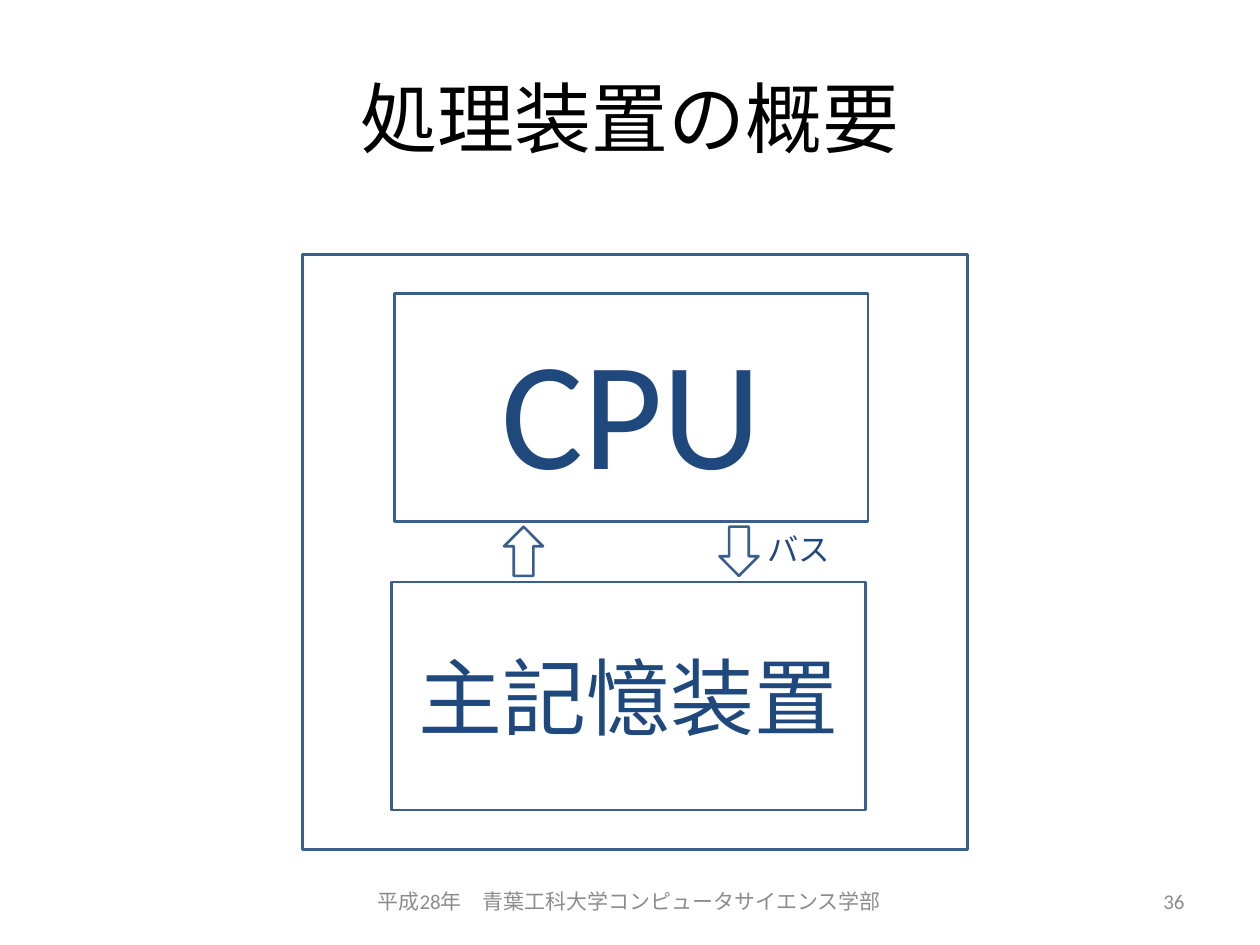
from dataclasses import dataclass

from pptx import Presentation
from pptx.dml.color import RGBColor
from pptx.enum.shapes import MSO_SHAPE
from pptx.enum.text import MSO_ANCHOR, MSO_AUTO_SIZE, PP_ALIGN
from pptx.slide import Slide
from pptx.util import Inches, Pt

BLACK = RGBColor(0x00, 0x00, 0x00)
WHITE = RGBColor(0xFF, 0xFF, 0xFF)
GRAY = RGBColor(0x8C, 0x8C, 0x8C)
NAVY = RGBColor(0x1F, 0x49, 0x7D)
OUTLINE = RGBColor(0x3A, 0x5F, 0x8C)
RECTANGLE = MSO_SHAPE.RECTANGLE
DOWN_ARROW = MSO_SHAPE.DOWN_ARROW
LEFT, CENTER, RIGHT = PP_ALIGN.LEFT, PP_ALIGN.CENTER, PP_ALIGN.RIGHT
TOP, MIDDLE = MSO_ANCHOR.TOP, MSO_ANCHOR.MIDDLE
FIT_SHAPE = MSO_AUTO_SIZE.SHAPE_TO_FIT_TEXT
COLUMNS, ROWS = 100, 75
BLOCK_SIZE = (37.6, 18.1)
ARROW_SIZE = (3.1, 3.9)
BUS_ROW = 41.8
FOOTER_ROW, FOOTER_HEIGHT = 69.5, 4


@dataclass
class Diagram:
    """Draws styled elements on a slide divided into 100 columns and 75 rows."""

    slide: Slide
    width: int
    height: int
    font: str = "Calibri"
    line_width: float = 1.5

    def area(self, column, row, columns, rows):
        across, down = self.width / COLUMNS, self.height / ROWS
        return [round(n) for n in
                (column * across, row * down, columns * across, rows * down)]

    def set_text(self, frame, text, size, color, align, anchor=MIDDLE):
        frame.text = text
        frame.word_wrap = True
        frame.vertical_anchor = anchor
        paragraph = frame.paragraphs[0]
        paragraph.alignment = align
        font = paragraph.runs[0].font
        font.name, font.size = self.font, Pt(size)
        font.color.rgb = color

    def title(self, text, *place):
        heading = self.slide.shapes.title
        heading.left, heading.top, heading.width, heading.height = self.area(*place)
        self.set_text(heading.text_frame, text, 44, BLACK, CENTER)

    def label(self, text, place, size, color, align, anchor=MIDDLE):
        frame = self.slide.shapes.add_textbox(*self.area(*place)).text_frame
        self.set_text(frame, text, size, color, align, anchor)
        return frame

    def outlined(self, kind, *place):
        shape = self.slide.shapes.add_shape(kind, *self.area(*place))
        shape.shadow.inherit = False
        shape.fill.solid()
        shape.fill.fore_color.rgb = WHITE
        shape.line.color.rgb = OUTLINE
        shape.line.width = Pt(self.line_width)
        return shape

    def block(self, text, column, row, size):
        unit = self.outlined(RECTANGLE, column, row, *BLOCK_SIZE)
        self.set_text(unit.text_frame, text, size, NAVY, CENTER)

    def bus_arrow(self, column, rotation=0):
        arrow = self.outlined(DOWN_ARROW, column, BUS_ROW, *ARROW_SIZE)
        arrow.rotation = rotation


def main():
    deck = Presentation()
    deck.slide_width, deck.slide_height = Inches(10), Inches(7.5)
    slide = deck.slides.add_slide(deck.slide_layouts.get_by_name("Title Only"))
    diagram = Diagram(slide, deck.slide_width, deck.slide_height)

    diagram.title("処理装置の概要", 5, 3, 90, 12.5)
    diagram.label("平成28年　青葉工科大学コンピュータサイエンス学部",
                  (28.3, FOOTER_ROW, 43.3, FOOTER_HEIGHT), 12, GRAY, CENTER)
    diagram.label("36", (71.7, FOOTER_ROW, 23.3, FOOTER_HEIGHT), 12, GRAY, RIGHT)

    diagram.outlined(RECTANGLE, 24, 20.2, 52.8, 47.2)
    diagram.block("CPU", 31.3, 23.3, 88)
    diagram.block("主記憶装置", 31.1, 46.2, 48)
    diagram.bus_arrow(57.1)
    diagram.bus_arrow(40, rotation=180)
    bus = diagram.label("バス", (59.9, BUS_ROW, 7.1, 3.9), 18, NAVY, LEFT, TOP)
    bus.auto_size = FIT_SHAPE
    bus.paragraphs[0].line_spacing = 0.95

    deck.save("out.pptx")


if __name__ == "__main__":
    main()
